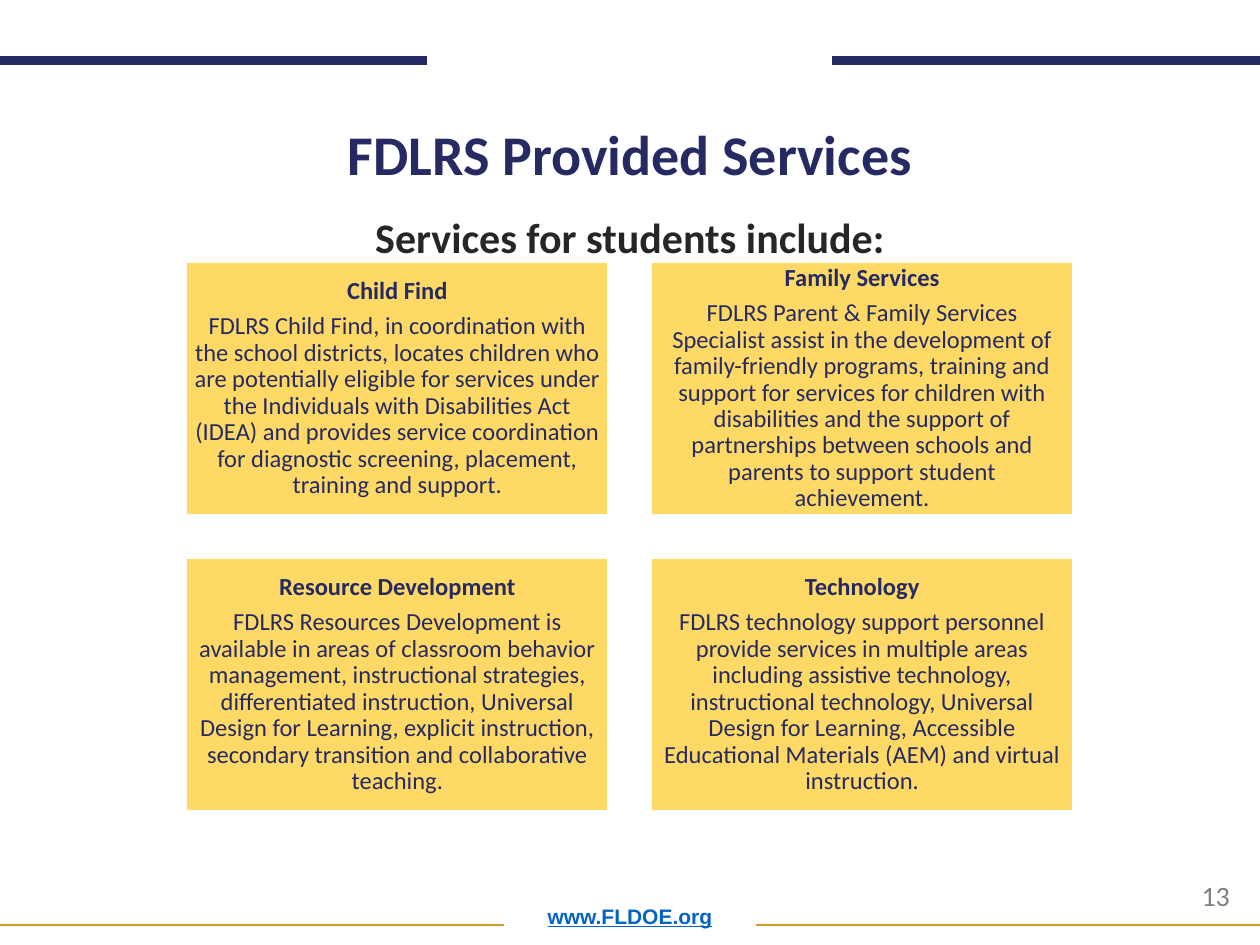
"""Build the FDLRS Provided Services slide."""
import pptx
import pptx.dml.color
import pptx.enum.shapes
import pptx.enum.text
import pptx.oxml.ns
import pptx.util
import lxml.etree

Pt = pptx.util.Pt
ANCHOR = pptx.enum.text.MSO_ANCHOR
ALIGN = pptx.enum.text.PP_ALIGN

THEME = {
    "navy": "262A63", "gold": "CD9D2C", "card": "FFD966", "white": "FFFFFF",
    "title": {"name": "Calibri", "size": Pt(32), "bold": True, "color": "262A63"},
    "subtitle": {"name": "Calibri", "size": Pt(24), "bold": True, "color": "262626"},
    "heading": {"name": "Calibri", "size": Pt(14), "bold": True, "color": "262A63"},
    "body": {"name": "Calibri", "size": Pt(14), "bold": False, "color": "262A63"},
    "number": {"name": "Calibri", "size": Pt(16), "bold": False, "color": "7F7F7F"},
    "web": {"name": "Arial", "size": Pt(12), "bold": True, "underline": True, "color": "0563C1"},
}


def rgb(value):
    return pptx.dml.color.RGBColor.from_string(value)


def write(sp, lines, anchor=ANCHOR.TOP, margin=None, **layout):
    tf = sp.text_frame
    tf.word_wrap = True
    tf.auto_size = pptx.enum.text.MSO_AUTO_SIZE.NONE
    tf.vertical_anchor = anchor
    if margin is not None:
        for side in ("left", "top", "right", "bottom"):
            setattr(tf, f"margin_{side}", margin)
    for i, (text, style) in enumerate(lines):
        p = tf.add_paragraph() if i else tf.paragraphs[0]
        for name, value in layout.items():
            setattr(p, name, value)
        r = p.add_run()
        r.text = text
        for name, value in THEME[style].items():
            if name == "color":
                r.font.color.rgb = rgb(value)
            else:
                setattr(r.font, name, value)


prs = pptx.Presentation()
prs.slide_width, prs.slide_height = Pt(720), Pt(540)
s = prs.slides.add_slide(prs.slide_layouts[5])

for x1, x2, y, color, width in (
    (0, 288, 528.5, "gold", 1),
    (432, 720, 528.5, "gold", 1),
    (0, 244, 34.7, "navy", 5),
    (475.5, 720, 34.7, "navy", 5),
):
    line = s.shapes.add_connector(pptx.enum.shapes.MSO_CONNECTOR.STRAIGHT, Pt(x1), Pt(y), Pt(x2), Pt(y))
    line.line.color.rgb = rgb(THEME[color])
    line.line.width = Pt(width)
    lxml.etree.SubElement(line._element.spPr, pptx.oxml.ns.qn("a:effectLst"))

title = s.shapes.title
title.left, title.top, title.width, title.height = Pt(49.5), Pt(56.2), Pt(621), Pt(67.7)
write(title, [("FDLRS Provided Services", "title")], ANCHOR.MIDDLE,
      alignment=ALIGN.CENTER, line_spacing=0.9)

for text, style, box, anchor, layout in (
    ("Services for students include:", "subtitle", (175, 117.4, 370, 58.3), ANCHOR.TOP,
     {"alignment": ALIGN.CENTER}),
    ("www.FLDOE.org", "web", (49.5, 504, 621, 30.2), ANCHOR.BOTTOM,
     {"alignment": ALIGN.CENTER, "line_spacing": 0.9}),
    ("13", "number", (679.5, 498.5, 37.5, 26.6), ANCHOR.TOP, {"alignment": ALIGN.LEFT}),
):
    sp = s.shapes.add_textbox(*map(Pt, box))
    write(sp, [(text, style)], anchor, **layout)

cards = (
    ("Child Find",
     "FDLRS Child Find, in coordination with the school districts, locates children who are "
     "potentially eligible for services under the Individuals with Disabilities Act (IDEA) and "
     "provides service coordination for diagnostic screening, placement, training and support."),
    ("Family Services",
     "FDLRS Parent & Family Services Specialist assist in the development of family-friendly "
     "programs, training and support for services for children with disabilities and the support "
     "of partnerships between schools and parents to support student achievement."),
    ("Resource Development",
     "FDLRS Resources Development is available in areas of classroom behavior management, "
     "instructional strategies, differentiated instruction, Universal Design for Learning, "
     "explicit instruction, secondary transition and collaborative teaching."),
    ("Technology",
     "FDLRS technology support personnel provide services in multiple areas including assistive "
     "technology, instructional technology, Universal Design for Learning, Accessible Educational "
     "Materials (AEM) and virtual instruction."),
)
card_w, card_h, gap = 241, 144.6, 24.6
for i, (heading, body) in enumerate(cards):
    row, col = divmod(i, 2)
    sp = s.shapes.add_shape(
        pptx.enum.shapes.MSO_SHAPE.RECTANGLE,
        Pt(106.6 + col * (card_w + gap)), Pt(149.8 + row * (card_h + gap)), Pt(card_w), Pt(card_h))
    sp.shadow.inherit = False
    sp.fill.solid()
    sp.fill.fore_color.rgb = rgb(THEME["card"])
    sp.line.color.rgb = rgb(THEME["white"])
    sp.line.width = Pt(1)
    write(sp, [(heading, "heading"), (body, "body")], ANCHOR.MIDDLE, Pt(4.2),
          alignment=ALIGN.CENTER, line_spacing=0.9, space_after=Pt(5))

prs.save("out.pptx")
